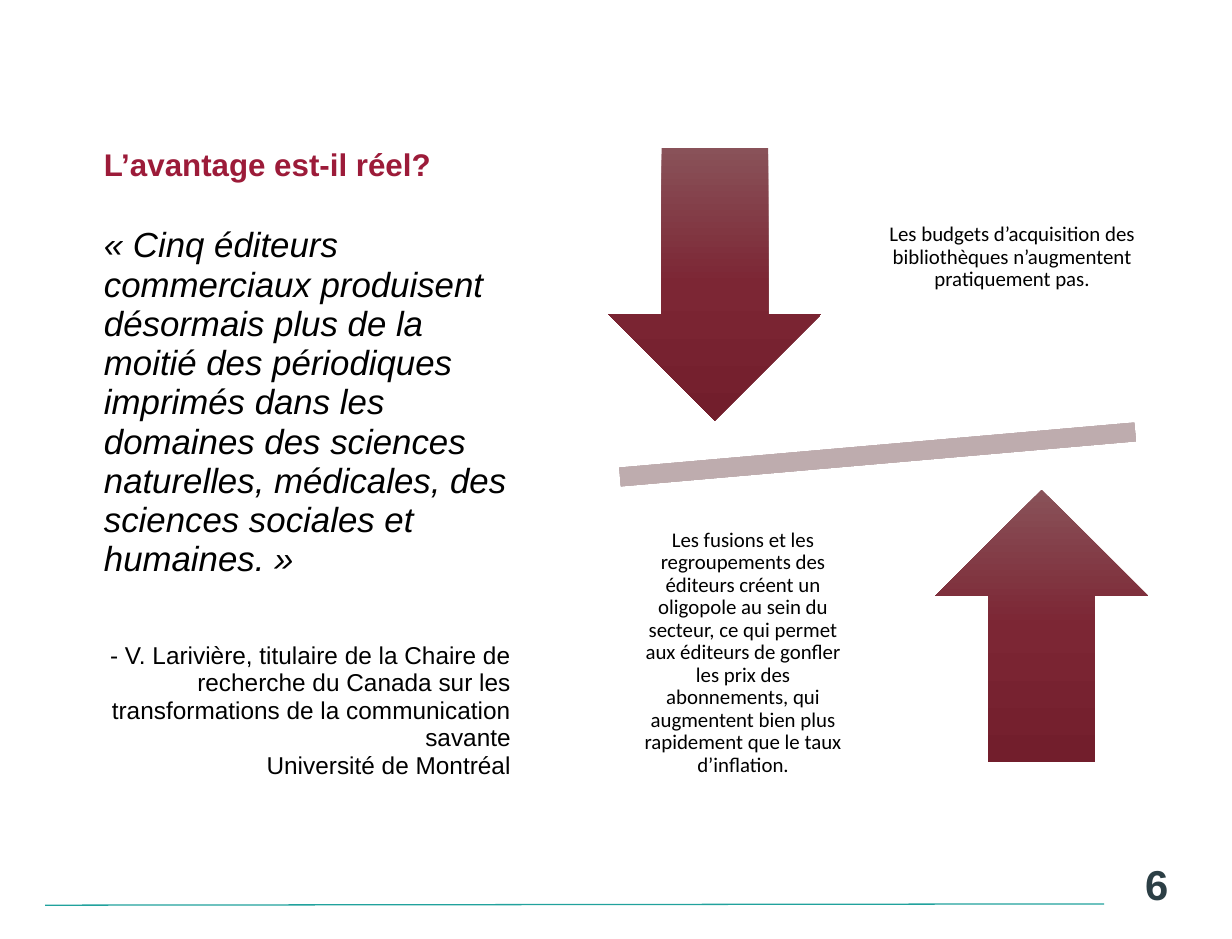
from copy import deepcopy

from lxml import etree
from pptx import Presentation
from pptx.dml.color import RGBColor
from pptx.enum import shapes, text
from pptx.oxml import ns
from pptx.util import Inches, Pt

HUES = {"title": "9C1B39", "text": "000000", "page": "2C3F45", "rule": "21A29D"}
ARROW = ["895259", "7C2634", "721E2C"]
BAR = ["C6B7B8", "BEACAE", "AA989A"]
ALIGN = text.PP_ALIGN
ANCHOR = text.MSO_ANCHOR
SHAPE = shapes.MSO_SHAPE


class Deck:
    """Holds the house style and the slide being filled."""

    def __init__(self, width, height):
        self.prs = Presentation()
        self.prs.slide_width, self.prs.slide_height = Inches(width), Inches(height)
        self.slide = self.prs.slides.add_slide(self.prs.slide_layouts[1])
        self.items = self.slide.shapes

    def style(self, para, words, size, hue="text", font="Arial", bold=False,
              italic=False, align=ALIGN.LEFT, space=0.9, before=0):
        para.text = words
        para.alignment, para.line_spacing = align, space
        para.space_before = Pt(before)
        para.font.name, para.font.size = font, Pt(size)
        para.font.bold, para.font.italic = bold, italic
        para.font.color.rgb = RGBColor.from_string(HUES[hue])

    def place(self, item, box, anchor):
        item.left, item.top, item.width, item.height = map(Inches, box)
        frame = item.text_frame
        frame.word_wrap = True
        frame.auto_size = text.MSO_AUTO_SIZE.NONE
        frame.vertical_anchor = anchor
        return frame

    def title(self, box, words):
        frame = self.place(self.items.title, box, ANCHOR.MIDDLE)
        self.style(frame.paragraphs[0], words, 18, "title", bold=True)

    def body(self, box, parts):
        """Fill the body with (words, style) pairs, without bullets."""
        frame = self.place(self.slide.placeholders[1], box, ANCHOR.TOP)
        for n, (words, look) in enumerate(parts):
            para = frame.add_paragraph() if n else frame.paragraphs[0]
            props = para._p.get_or_add_pPr()
            props.set("marL", "0")
            props.set("indent", "0")
            etree.SubElement(props, ns.qn("a:buNone"))
            self.style(para, words, space=0.94, **look)

    def label(self, box, words, size, inset=0.09, **look):
        item = self.items.add_textbox(*map(Inches, box))
        frame = self.place(item, box, ANCHOR.MIDDLE)
        frame.margin_left = frame.margin_right = Inches(inset)
        self.style(frame.paragraphs[0], words, size, **look)

    def shape(self, kind, box, hues, turn=0):
        """Add a shape with a three-stop gradient from top to bottom."""
        item = self.items.add_shape(kind, *map(Inches, box))
        item.rotation = turn
        item.shadow.inherit = False
        item.line.fill.background()
        item.fill.gradient()
        item.fill.gradient_angle = 270
        stops = item._element.spPr.find(".//" + ns.qn("a:gsLst"))
        stops.append(deepcopy(stops[-1]))
        for n, (stop, hue) in enumerate(zip(item.fill.gradient_stops, hues)):
            stop.position = n / 2
            stop.color.rgb = RGBColor.from_string(hue)

    def rule(self, *ends):
        line = self.items.add_connector(shapes.MSO_CONNECTOR.STRAIGHT, *map(Inches, ends))
        line.line.color.rgb = RGBColor.from_string(HUES["rule"])
        line.line.width = Pt(0.75)
        etree.SubElement(line._element.spPr, ns.qn("a:effectLst"))


def main():
    deck = Deck(9.84, 7.5)
    deck.rule(8.82, 7.22, 0.36, 7.23)
    deck.title((0.73, 0.91, 8.45, 0.83), "L’avantage est-il réel?")
    deck.body((0.73, 1.76, 3.45, 4.65), [
        ("« Cinq éditeurs commerciaux produisent désormais plus de la moitié des "
         "périodiques imprimés dans les domaines des sciences naturelles, médicales, "
         "des sciences sociales et humaines. »", dict(size=20, italic=True)),
        ("- V. Larivière, titulaire de la Chaire de recherche du Canada sur les "
         "transformations de la communication savante\nUniversité de Montréal",
         dict(size=14, align=ALIGN.RIGHT, before=36)),
    ])
    deck.label((6.95, 6.67, 2.48, 0.83), "6", 24, inset=0.1, hue="page",
               bold=True, align=ALIGN.RIGHT)

    deck.shape(SHAPE.MATH_MINUS, (4.2, 3.31, 5.62, 0.64), BAR, turn=355)
    deck.shape(SHAPE.DOWN_ARROW, (4.86, 1.18, 1.7, 2.18), ARROW)
    deck.shape(SHAPE.UP_ARROW, (7.47, 3.91, 1.7, 2.18), ARROW)
    note = dict(size=12, font="Calibri", align=ALIGN.CENTER)
    deck.label((6.82, 0.91, 2.53, 2.29),
               "Les budgets d’acquisition des bibliothèques n’augmentent "
               "pratiquement pas.", **note)
    deck.label((5.03, 4.07, 1.81, 2.29),
               "Les fusions et les regroupements des éditeurs créent un oligopole au "
               "sein du secteur, ce qui permet aux éditeurs de gonfler les prix des "
               "abonnements, qui augmentent bien plus rapidement que le taux "
               "d’inflation.", **note)
    deck.prs.save("out.pptx")


if __name__ == "__main__":
    main()
